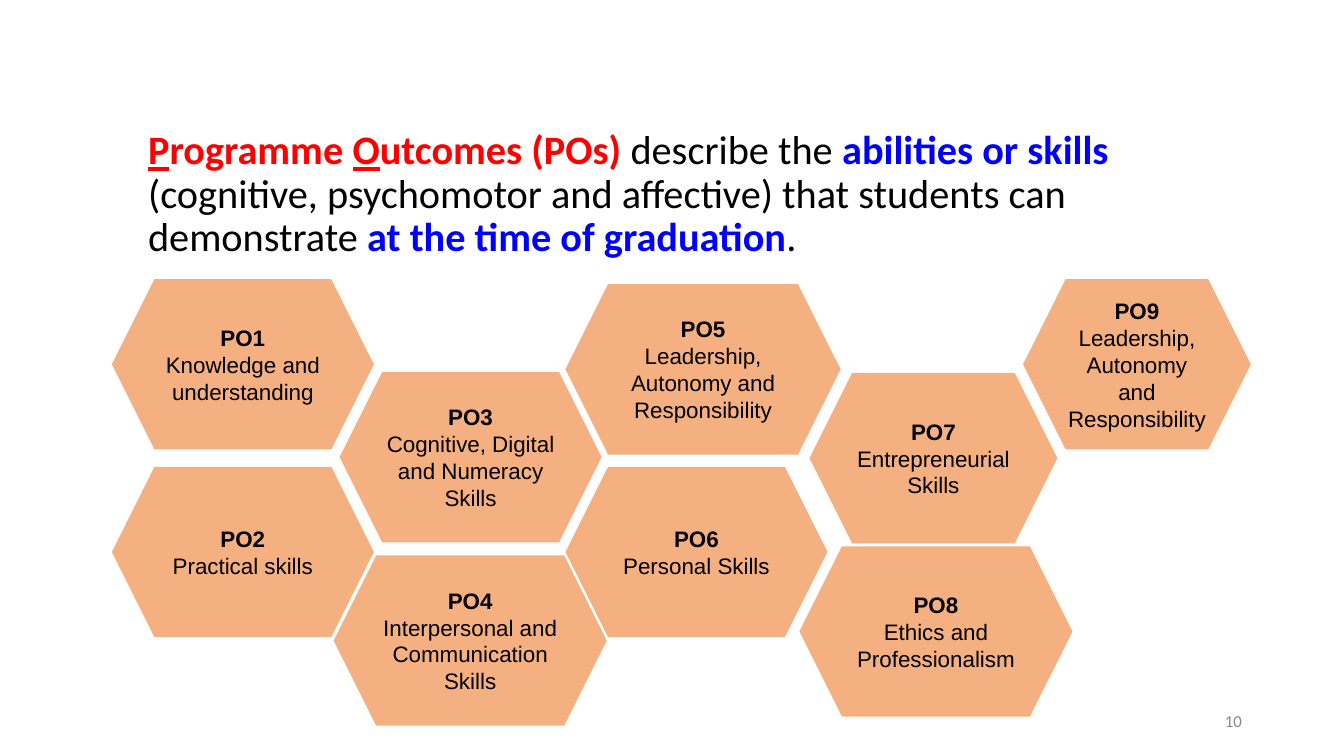
from dataclasses import dataclass

from pptx import Presentation, util as u
from pptx.dml.color import RGBColor
from pptx.enum import shapes, text

Pt = u.Pt


@dataclass(frozen=True)
class Theme:
    """Colours, fonts and type sizes of the slide."""
    ink: str = "000000"
    red: str = "FF0000"
    blue: str = "0000FF"
    grey: str = "888888"
    peach: str = "F4B081"
    head: str = "Calibri"
    body: str = "Arial"
    big: float = 28.8
    mid: float = 16
    small: float = 12


class Deck:
    """Draws styled elements on the current slide."""

    def __init__(self, theme):
        self.theme = theme
        self.prs = Presentation()
        self.prs.slide_width, self.prs.slide_height = Pt(960), Pt(540)
        self.slide = self.prs.slides.add_slide(self.prs.slide_layouts[6])
        self.group = None

    def frame(self, shape, left=7.2):
        """Set wrapping, margins and anchor of a shape's text."""
        frame = shape.text_frame
        frame.word_wrap = True
        frame.margin_left, frame.margin_right = Pt(left), Pt(7.2)
        frame.margin_top = frame.margin_bottom = Pt(3.6)
        frame.vertical_anchor = text.MSO_ANCHOR.MIDDLE
        return frame

    def run(self, para, words, font, size, color, bold=False, line=False):
        """Add one styled run."""
        run = para.add_run()
        run.text = words
        run.font.name, run.font.size = font, Pt(size)
        run.font.bold, run.font.underline = bold, line
        run.font.color.rgb = RGBColor.from_string(color)

    def label(self, box, runs, size, left=7.2, align=text.PP_ALIGN.LEFT, space=1.0):
        """Add a text box of one paragraph."""
        shape = self.slide.shapes.add_textbox(*map(Pt, box))
        para = self.frame(shape, left).paragraphs[0]
        para.alignment, para.line_spacing = align, space
        for words, color, bold, line in runs:
            self.run(para, words, self.theme.head, size, color, bold, line)

    def hexagon(self, x, y, wide, code, skill):
        """Add one outcome hexagon to the group."""
        t = self.theme
        if self.group is None:
            self.group = self.slide.shapes.add_group_shape()
        shape = self.group.shapes.add_shape(
            shapes.MSO_SHAPE.HEXAGON, Pt(x), Pt(y), Pt(wide), Pt(121.7))
        shape.shadow.inherit = False
        shape.fill.solid()
        shape.fill.fore_color.rgb = RGBColor.from_string(t.peach)
        shape.line.fill.background()
        frame = self.frame(shape)
        paras = frame.paragraphs[0], frame.add_paragraph()
        for para, words, bold in zip(paras, (code, skill), (True, False)):
            para.alignment = text.PP_ALIGN.CENTER
            self.run(para, words, t.body, t.mid, t.ink, bold)

    def save(self):
        """Write the file."""
        self.prs.save("out.pptx")


def main():
    """Build the programme outcomes slide."""
    t = Theme()
    deck = Deck(t)
    deck.label((91.4, 87.1, 828, 104.4), [
        ("P", t.red, True, True),
        ("rogramme ", t.red, True, False),
        ("O", t.red, True, True),
        ("utcomes (POs)", t.red, True, False),
        (" describe the ", t.ink, False, False),
        ("abilities or skills ", t.blue, True, False),
        ("(cognitive, psychomotor and affective) that students can demonstrate ",
         t.ink, False, False),
        ("at the time of graduation", t.blue, True, False),
        (".", t.ink, False, False),
    ], t.big, left=14.4, space=0.9)

    lead = "Leadership, Autonomy and Responsibility"
    for item in (
        (242.6, 265.7, 187.2, "PO3", "Cognitive, Digital and Numeracy Skills"),
        (403.9, 203, 196.6, "PO5", lead),
        (403.9, 333.4, 187.2, "PO6", "Personal Skills"),
        (578.2, 266.4, 177.1, "PO7", "Entrepreneurial Skills"),
        (730.8, 199.4, 162.7, "PO9", lead),
        (79.9, 333.4, 187.2, "PO2", "Practical skills"),
        (79.9, 199.4, 187.2, "PO1", "Knowledge and understanding"),
        (238.3, 396.7, 195.1, "PO4", "Interpersonal and Communication Skills"),
        (571, 390.2, 195.1, "PO8", "Ethics and Professionalism"),
    ):
        deck.hexagon(*item)

    deck.label((678.2, 500.4, 216, 28.8), [("10", t.grey, False, False)],
               t.small, align=text.PP_ALIGN.RIGHT)
    deck.save()


if __name__ == "__main__":
    main()
